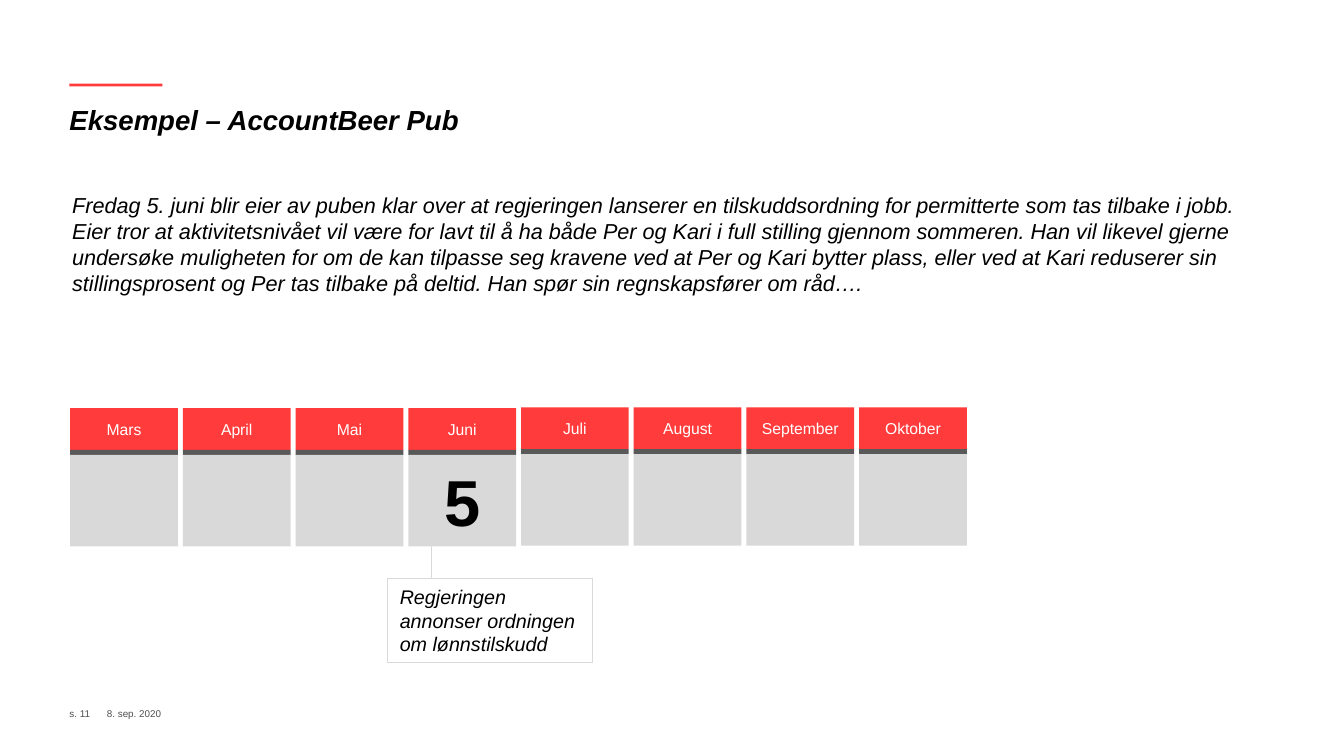
from pptx import Presentation
from pptx.dml.color import RGBColor
from pptx.enum.shapes import MSO_CONNECTOR, MSO_SHAPE
from pptx.enum.text import MSO_ANCHOR, MSO_AUTO_SIZE, PP_ALIGN
from pptx.oxml.ns import qn
from pptx.util import Inches, Pt
from lxml import etree

RED, DARK, GREY = "FF3B3B", "595959", "D9D9D9"
MONTHS = ["Mars", "April", "Mai", "Juni", "Juli", "August", "September", "Oktober"]
STORY = (
    "Fredag 5. juni blir eier av puben klar over at regjeringen lanserer en "
    "tilskuddsordning for permitterte som tas tilbake i jobb. Eier tror at "
    "aktivitetsnivået vil være for lavt til å ha både Per og Kari i full stilling "
    "gjennom sommeren. Han vil likevel gjerne undersøke muligheten for om de kan "
    "tilpasse seg kravene ved at Per og Kari bytter plass, eller ved at Kari "
    "reduserer sin stillingsprosent og Per tas tilbake på deltid. Han spør sin "
    "regnskapsfører om råd…."
)


def write(shape, text, size, color="000000", bold=False, italic=False,
          align=PP_ALIGN.LEFT, anchor=MSO_ANCHOR.TOP, inset=(0.1, 0.05)):
    frame = shape.text_frame
    frame.word_wrap = True
    frame.auto_size = MSO_AUTO_SIZE.NONE
    frame.vertical_anchor = anchor
    frame.margin_left = frame.margin_right = Inches(inset[0])
    frame.margin_top = frame.margin_bottom = Inches(inset[1])
    para = frame.paragraphs[0]
    para.alignment = align
    run = para.add_run()
    run.text = text
    font = run.font
    font.name, font.size, font.bold, font.italic = "Arial", Pt(size), bold, italic
    font.color.rgb = RGBColor.from_string(color)


def block(left, top, width, height, fill=None, line=None):
    shape = slide.shapes.add_shape(
        MSO_SHAPE.RECTANGLE, Inches(left), Inches(top), Inches(width), Inches(height))
    shape.shadow.inherit = False
    if fill:
        shape.fill.solid()
        shape.fill.fore_color.rgb = RGBColor.from_string(fill)
    else:
        shape.fill.background()
    if line:
        shape.line.color.rgb = RGBColor.from_string(line)
        shape.line.width = Pt(1)
    else:
        shape.line.fill.background()
    return shape


deck = Presentation()
deck.slide_width, deck.slide_height = Inches(18.96), Inches(10.67)
slide = deck.slides.add_slide(deck.slide_layouts[5])

# Heading and story
block(0.98, 1.18, 1.31, 0.04, RED)
title = slide.shapes.title
title.left, title.top = Inches(0.98), Inches(1.46)
title.width, title.height = Inches(17), Inches(0.94)
write(title, "Eksempel – AccountBeer Pub", 28, bold=True, italic=True, inset=(0, 0))
story = slide.shapes.add_textbox(Inches(0.92), Inches(2.66), Inches(17), Inches(1.58))
write(story, STORY, 22, italic=True)

# Calendar: one column a month
middle = {"align": PP_ALIGN.CENTER, "anchor": MSO_ANCHOR.MIDDLE}
for i, month in enumerate(MONTHS):
    left = 0.99 + 1.59 * i
    top = 5.76 if i < 4 else 5.75
    head = block(left, top, 1.52, 0.59, RED)
    write(head, month, 16, "FFFFFF", **middle)
    block(left, top + 0.59, 1.52, 0.07, DARK)
    cell = block(left, top + 0.66, 1.52, 1.29, GREY)
    if month == "Juni":
        write(cell, "5", 66, bold=True, **middle)

# Callout below June
note = block(5.46, 8.16, 2.9, 1.19, line=GREY)
write(note, "Regjeringen annonser ordningen om lønnstilskudd", 20, italic=True,
      anchor=MSO_ANCHOR.MIDDLE, inset=(0.18, 0.05))
stem = slide.shapes.add_connector(
    MSO_CONNECTOR.STRAIGHT, Inches(6.09), Inches(7.47), Inches(6.09), Inches(8.16))
stem.line.color.rgb = RGBColor.from_string(GREY)
stem.line.width = Pt(0.5)
etree.SubElement(stem.element.spPr, qn("a:effectLst"))

# Footer
for left, width, text in [(0.98, 0.53, "s. 11"), (1.51, 1.34, "8. sep. 2020")]:
    foot = slide.shapes.add_textbox(Inches(left), Inches(9.98), Inches(width), Inches(0.17))
    write(foot, text, 10, "4F4F4F", anchor=MSO_ANCHOR.MIDDLE, inset=(0, 0))

deck.save("out.pptx")
